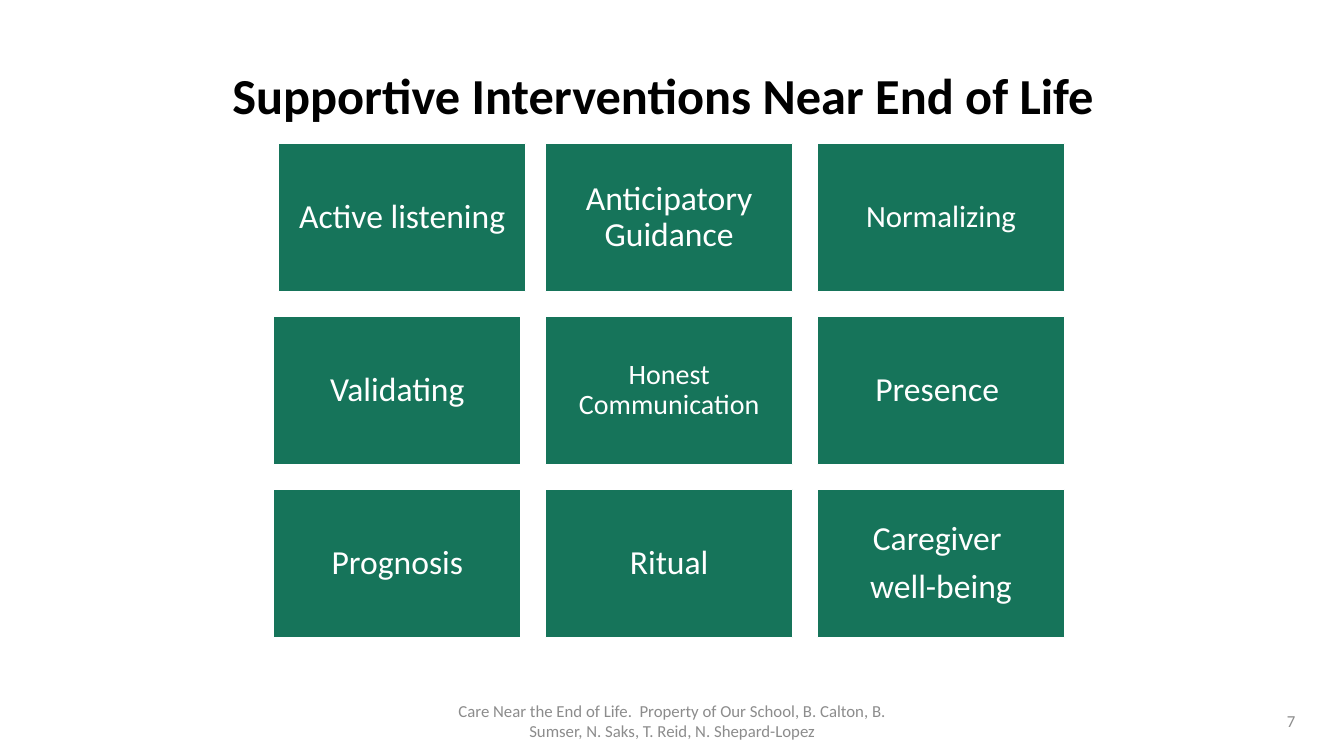
import pptx
import pptx.util
import pptx.dml.color
import pptx.enum.shapes
import pptx.enum.text

Cm = pptx.util.Cm
Pt = pptx.util.Pt
Align = pptx.enum.text.PP_ALIGN

TILES = [
    [("Active listening", 24), ("Anticipatory Guidance", 24), ("Normalizing", 22)],
    [("Validating", 24), ("Honest Communication", 20), ("Presence ", 24)],
    [("Prognosis", 24), ("Ritual", 24), ("Caregiver \nwell-being", 24)],
]
LEFT, TOP = 6.9, 3.61
WIDTH, HEIGHT = 6.23, 3.74
STEP_X, STEP_Y = 6.85, 4.36
NUDGE = 0.12


def color(code):
    return pptx.dml.color.RGBColor.from_string(code)


def write(shape, text, size, code, align=Align.CENTER, bold=False, line=1.0):
    frame = shape.text_frame
    frame.word_wrap = True
    frame.vertical_anchor = pptx.enum.text.MSO_ANCHOR.MIDDLE
    frame.text = text
    for para in frame.paragraphs:
        para.alignment = align
        para.line_spacing = line
        for run in para.runs:
            run.font.name = "Calibri"
            run.font.size = Pt(size)
            run.font.bold = bold
            run.font.color.rgb = color(code)
    for para in frame.paragraphs[:-1]:
        para.space_after = Pt(size * 0.35)


def label(slide, x, y, w, h, text, size, code, **style):
    box = slide.shapes.add_textbox(Cm(x), Cm(y), Cm(w), Cm(h))
    write(box, text, size, code, **style)


def tile(slide, x, y, text, size):
    rect = pptx.enum.shapes.MSO_SHAPE.RECTANGLE
    box = slide.shapes.add_shape(rect, Cm(x), Cm(y), Cm(WIDTH), Cm(HEIGHT))
    box.shadow.inherit = False
    box.fill.solid()
    box.fill.fore_color.rgb = color("16745A")
    box.line.color.rgb = color("FFFFFF")
    box.line.width = Pt(1)
    write(box, text, size, "FFFFFF", line=0.9)
    frame = box.text_frame
    inset = Cm(size * 0.01)
    frame.margin_left = frame.margin_right = inset
    frame.margin_top = frame.margin_bottom = inset


def grid(slide):
    for row, items in enumerate(TILES):
        for col, (text, size) in enumerate(items):
            shift = NUDGE if row == col == 0 else 0
            tile(slide, LEFT + col * STEP_X + shift, TOP + row * STEP_Y, text, size)


def main():
    deck = pptx.Presentation()
    deck.slide_width = Cm(33.87)
    deck.slide_height = Cm(19.05)
    slide = deck.slides.add_slide(deck.slide_layouts[6])
    label(slide, 5.1, 1.17, 23.52, 2.59,
          "Supportive Interventions Near End of Life ", 36, "000000",
          bold=True, line=0.9)
    grid(slide)
    label(slide, 32.18, 17.65, 1.6, 1.02, "7", 12, "8C8C8C", align=Align.LEFT)
    label(slide, 11.23, 17.65, 11.43, 1.02,
          "Care Near the End of Life.  Property of Our School, B. Calton, "
          "B. Sumser, N. Saks, T. Reid, N. Shepard-Lopez", 12, "8C8C8C")
    deck.save("out.pptx")


if __name__ == "__main__":
    main()
